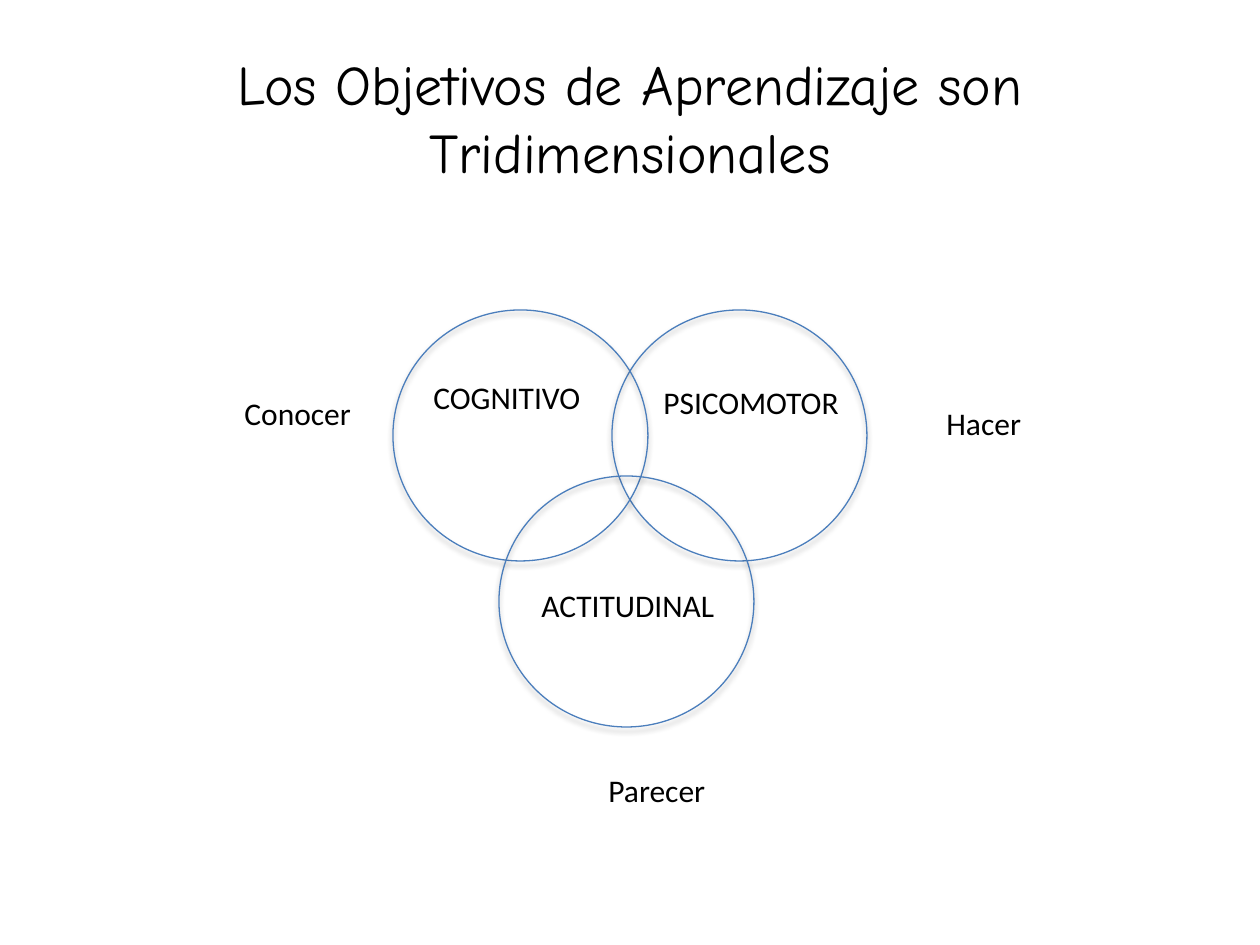
from lxml import etree
from pptx import Presentation
from pptx import util as u
from pptx.dml.color import RGBColor
from pptx.enum import shapes, text
from pptx.oxml import ns

EMU_PER_PX = 914400 / 126
CIRCLE_WIDTH, CIRCLE_HEIGHT = 255, 251
LABEL_HEIGHT = 50


def px(length):
    return u.Emu(round(length * EMU_PER_PX))


def color(value):
    return RGBColor.from_string(value)


def add_text(parent, content, left, top, width, height, *, size=18, font="Calibri",
             fill="000000", align=text.PP_ALIGN.LEFT, anchor=text.MSO_ANCHOR.TOP,
             wrap=False):
    box = parent.add_textbox(px(left), px(top), px(width), px(height))
    frame = box.text_frame
    frame.word_wrap = wrap
    frame.auto_size = text.MSO_AUTO_SIZE.NONE if wrap else text.MSO_AUTO_SIZE.SHAPE_TO_FIT_TEXT
    frame.vertical_anchor = anchor
    paragraph = frame.paragraphs[0]
    paragraph.alignment = align
    run = paragraph.add_run()
    run.text = content
    run.font.size = u.Pt(size)
    run.font.name = font
    run.font.color.rgb = color(fill)


def add_soft_shadow(shape):
    shape.shadow.inherit = False
    effects = shape._element.spPr.find(ns.qn("a:effectLst"))
    shadow = etree.SubElement(
        effects, ns.qn("a:outerShdw"), blurRad=str(u.Pt(3.1)), dist=str(u.Pt(1.8)),
        dir="5400000", rotWithShape="0")
    black = etree.SubElement(shadow, ns.qn("a:srgbClr"), val="000000")
    etree.SubElement(black, ns.qn("a:alpha"), val="35000")


def add_circle(parent, left, top):
    circle = parent.add_shape(shapes.MSO_SHAPE.OVAL, px(left), px(top),
                              px(CIRCLE_WIDTH), px(CIRCLE_HEIGHT))
    circle.fill.background()
    circle.line.color.rgb = color("4B7EBC")
    circle.line.width = u.Pt(0.75)
    add_soft_shadow(circle)


def add_title(slide, left, top, width, height):
    add_text(slide.shapes, "Los Objetivos de Aprendizaje son Tridimensionales",
             left, top, width, height, size=32, font="Comic Neue",
             align=text.PP_ALIGN.CENTER, anchor=text.MSO_ANCHOR.MIDDLE, wrap=True)


def add_venn(slide, left, top):
    group = slide.shapes.add_group_shape().shapes
    # Circles: right, left, bottom
    for x, y in ((219, 0), (0, 0), (106, 166)):
        add_circle(group, left + x, top + y)
    # Dimension names
    for name, x, y, width in (("COGNITIVO", 28, 62, 175),
                              ("PSICOMOTOR", 258, 67, 205),
                              ("ACTITUDINAL", 136, 270, 200)):
        add_text(group, name, left + x, top + y, width, LABEL_HEIGHT)


def add_verbs(slide, left, top):
    for verb, x, y, width in (("Conocer", 0, 0, 134),
                              ("Hacer", 702, 10, 101),
                              ("Parecer", 364, 377, 125)):
        add_text(slide.shapes, verb, left + x, top + y, width, LABEL_HEIGHT)


def main():
    presentation = Presentation()
    presentation.slide_width, presentation.slide_height = px(1260), px(945)
    slide = presentation.slides.add_slide(presentation.slide_layouts[6])
    add_title(slide, 63, 38, 1134, 158)
    add_venn(slide, 393, 310)
    add_verbs(slide, 232, 388)
    presentation.save("out.pptx")


if __name__ == "__main__":
    main()
